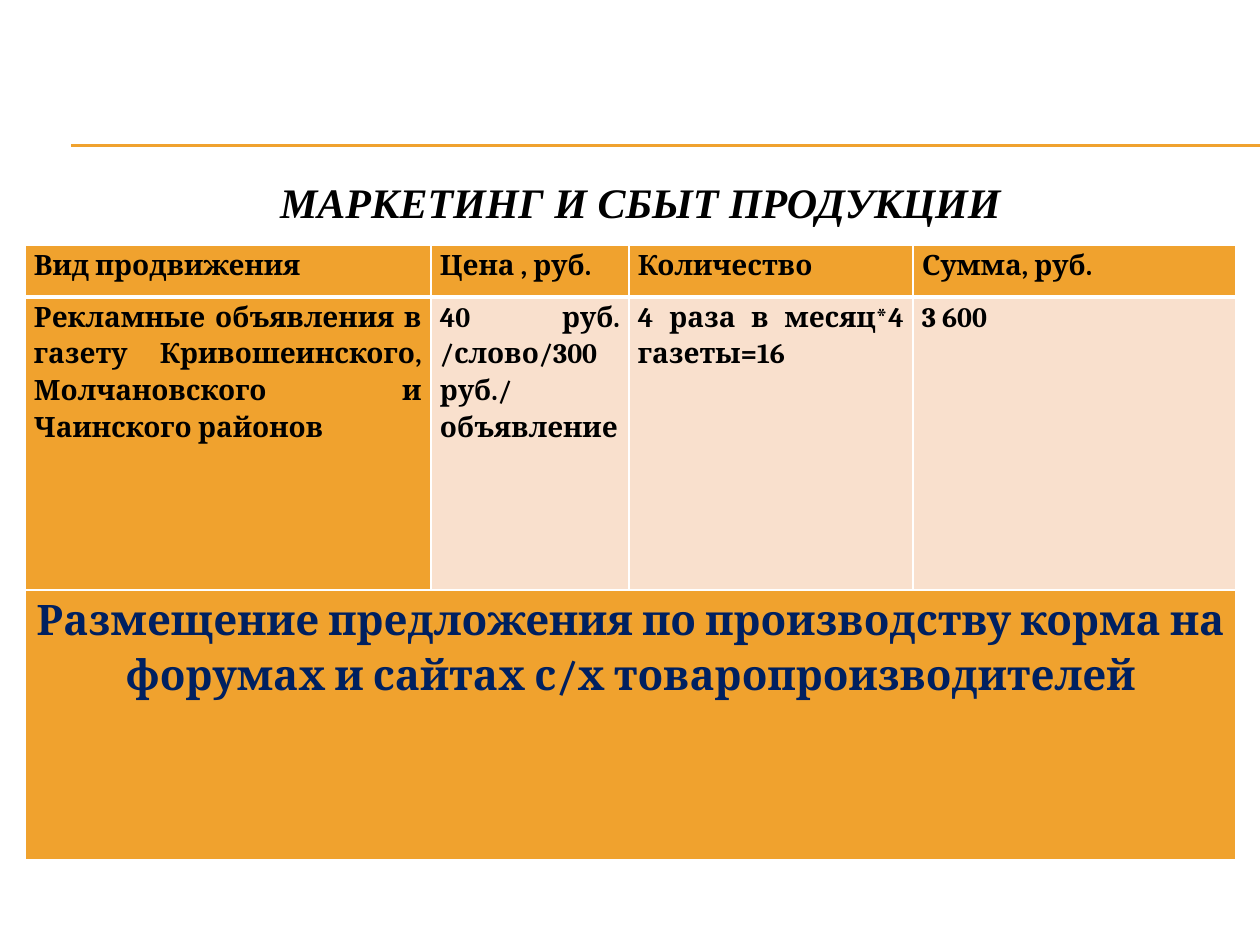
from dataclasses import dataclass

from lxml import etree
from pptx import Presentation
from pptx import util as u
from pptx.dml.color import RGBColor
from pptx.enum import shapes, text
from pptx.oxml import ns

EMU_PER_INCH, PX_PER_INCH = 914400, 126
COLORS = {"amber": "F0A22E", "peach": "F9E0CD", "white": "FFFFFF",
          "black": "000000", "navy": "002060"}
JUSTIFY, CENTER = text.PP_ALIGN.JUSTIFY, text.PP_ALIGN.CENTER


@dataclass
class Entry:
    row: int
    col: int
    words: str
    fill: str = "amber"
    color: str = "black"
    size: int = 16
    align: text.PP_ALIGN = JUSTIFY


COLUMNS = [406, 198, 284, 323]
ROWS = [52, 293, 270]
HEADINGS = ["Вид продвижения", "Цена , руб.", "Количество", "Сумма, руб."]
ENTRIES = [Entry(0, col, heading) for col, heading in enumerate(HEADINGS)] + [
    Entry(1, 0, "Рекламные объявления в газету Кривошеинского, "
                "Молчановского и Чаинского районов"),
    Entry(1, 1, "40 руб. /слово/300 руб./\nобъявление", "peach"),
    Entry(1, 2, "4 раза в месяц*4 газеты=16", "peach"),
    Entry(1, 3, "3 600", "peach"),
    Entry(2, 0, "Размещение предложения по производству корма на форумах "
                "и сайтах с/х товаропроизводителей", "amber", "navy", 24, CENTER),
]


def px(length: int) -> u.Emu:
    return u.Emu(round(length * EMU_PER_INCH / PX_PER_INCH))


def rgb(color: str) -> RGBColor:
    return RGBColor.from_string(COLORS[color])


def style_text(frame, font: str, size: int, color: str, align, italic=False) -> None:
    for paragraph in frame.paragraphs:
        paragraph.alignment = align
        for run in paragraph.runs:
            run.font.name = font
            run.font.size = u.Pt(size)
            run.font.bold = True
            run.font.italic = italic
            run.font.color.rgb = rgb(color)


def draw_rule(slide, y: int) -> None:
    rule = slide.shapes.add_connector(
        shapes.MSO_CONNECTOR.STRAIGHT, px(71), px(y), px(1260), px(y))
    rule.line.color.rgb = rgb("amber")
    rule.line.width = u.Pt(0.75)
    etree.SubElement(rule._element.spPr, ns.qn("a:effectLst"))


def draw_borders(cell, bottom: int) -> None:
    """Add white cell edges ahead of the fill, as the schema orders them."""
    properties = cell._tc.get_or_add_tcPr()
    edges = {"a:lnL": 1, "a:lnR": 1, "a:lnT": 1, "a:lnB": bottom}
    for place, (tag, points) in enumerate(edges.items()):
        edge = etree.Element(ns.qn(tag), w=str(u.Pt(points)))
        solid = etree.SubElement(edge, ns.qn("a:solidFill"))
        etree.SubElement(solid, ns.qn("a:srgbClr"), val=COLORS["white"])
        properties.insert(place, edge)


def fill_cell(cell, entry: Entry) -> None:
    cell.margin_left = cell.margin_right = px(9)
    cell.margin_top = cell.margin_bottom = 0
    cell.text_frame.text = entry.words
    style_text(cell.text_frame, "Cambria", entry.size, entry.color, entry.align)
    for paragraph in cell.text_frame.paragraphs:
        paragraph.line_spacing = 1.15


def draw_promotion_table(slide) -> None:
    table = slide.shapes.add_table(
        len(ROWS), len(COLUMNS), px(25), px(245), px(sum(COLUMNS)), px(sum(ROWS))).table
    for column, width in zip(table.columns, COLUMNS):
        column.width = px(width)
    for row, height in zip(table.rows, ROWS):
        row.height = px(height)
    table.cell(2, 0).merge(table.cell(2, len(COLUMNS) - 1))
    for entry in ENTRIES:
        fill_cell(table.cell(entry.row, entry.col), entry)
    fills = {(entry.row, entry.col): entry.fill for entry in ENTRIES}
    for row in range(len(ROWS)):
        for col in range(len(COLUMNS)):
            cell = table.cell(row, col)
            cell.fill.solid()
            cell.fill.fore_color.rgb = rgb(fills.get((row, col), "amber"))
            draw_borders(cell, bottom=3 if row == 0 else 1)


def draw_title(slide) -> None:
    title = slide.shapes.add_textbox(px(42), px(165), px(1197), px(673)).text_frame
    title.word_wrap = True
    title.margin_top = px(11)
    title.text = "МАРКЕТИНГ И СБЫТ ПРОДУКЦИИ"
    style_text(title, "Times New Roman", 24, "black", CENTER, italic=True)


def main() -> None:
    deck = Presentation()
    deck.slide_width, deck.slide_height = px(1260), px(945)
    slide = deck.slides.add_slide(deck.slide_layouts[6])

    # Double rule across the top
    for y in (145, 146):
        draw_rule(slide, y)

    # Heading and promotion costs
    draw_title(slide)
    draw_promotion_table(slide)
    deck.save("out.pptx")


if __name__ == "__main__":
    main()
